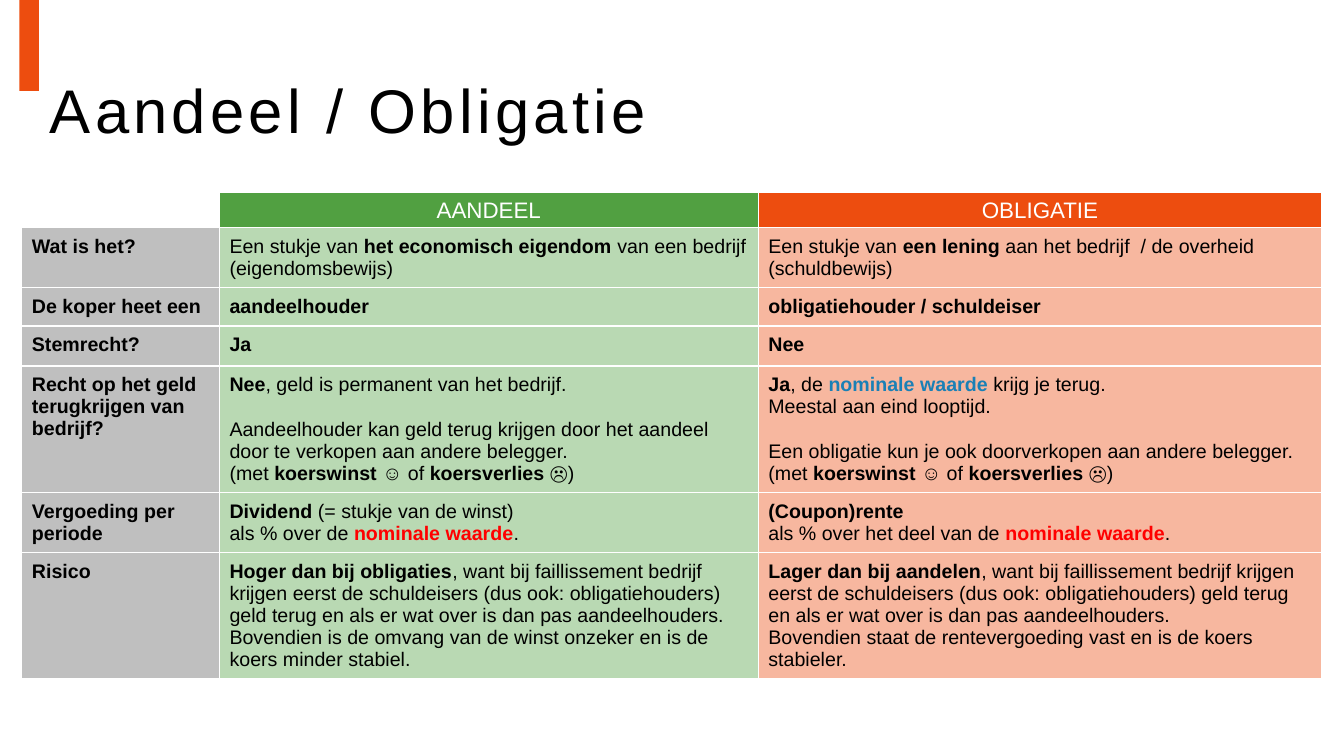
"""Build a slide that compares shares and bonds in a table."""
import dataclasses

import lxml.etree
import pptx
import pptx.dml.color
import pptx.enum.shapes
import pptx.enum.text
import pptx.oxml.ns
import pptx.util

Cm = pptx.util.Cm
Pt = pptx.util.Pt
qn = pptx.oxml.ns.qn


@dataclasses.dataclass(frozen=True)
class Theme:
    font: str = "Arial"
    black: str = "000000"
    white: str = "FFFFFF"
    gray: str = "BFBFBF"
    green: str = "51A041"
    orange: str = "ED4D0F"
    blue: str = "1A80B6"
    red: str = "FF0000"
    title_size: int = 44
    header_size: int = 16
    body_size: int = 14
    paragraph_gap: int = 16
    tint_percent: int = 40


THEME = Theme()
BOLD = {"bold": True}
BLUE = {"bold": True, "color": THEME.blue}
RED = {"bold": True, "color": THEME.red}

COLUMN_WIDTHS = [4.98, 13.58, 14.2]
ROW_HEIGHTS = [0.88, 1.51, 0.96, 1.01, 3.17, 1.51, 3.15]
HEADERS = [("AANDEEL", THEME.green), ("OBLIGATIE", THEME.orange)]
PROFIT_OR_LOSS = [("koerswinst ", BOLD), ("☺ of ", {}), ("koersverlies ", BOLD), ("☹)", {})]
BANKRUPTCY = (", want bij faillissement bedrijf krijgen eerst de schuldeisers "
              "(dus ook: obligatiehouders) geld terug en als er wat over is dan pas aandeelhouders.")
ROWS = [
    ("Wat is het?",
     [[("Een stukje van ", {}), ("het economisch eigendom ", BOLD),
       ("van een bedrijf (eigendomsbewijs)", {})]],
     [[("Een stukje van ", {}), ("een lening ", BOLD),
       ("aan het bedrijf  / de overheid\n(schuldbewijs)", {})]]),
    ("De koper heet een", [[("aandeelhouder", BOLD)]], [[("obligatiehouder / schuldeiser", BOLD)]]),
    ("Stemrecht?", [[("Ja", BOLD)]], [[("Nee", BOLD)]]),
    ("Recht op het geld terugkrijgen van bedrijf?",
     [[("Nee", BOLD), (", geld is permanent van het bedrijf.", {})],
      [("Aandeelhouder kan geld terug krijgen door het aandeel door te verkopen "
        "aan andere belegger.\n(met ", {}), *PROFIT_OR_LOSS]],
     [[("Ja", BOLD), (", de ", {}), ("nominale waarde ", BLUE),
       ("krijg je terug. \nMeestal aan eind looptijd.", {})],
      [("Een obligatie kun je ook doorverkopen aan andere belegger. (met ", {}), *PROFIT_OR_LOSS]]),
    ("Vergoeding per periode",
     [[("Dividend", BOLD), (" (= stukje van de winst)", {})],
      [("als % over de ", {}), ("nominale waarde", RED), (".", {})]],
     [[("(Coupon)rente \n", BOLD), ("als % over het deel van de ", {}),
       ("nominale waarde", RED), (".", {})]]),
    ("Risico",
     [[("Hoger dan bij obligaties", BOLD), (BANKRUPTCY, {})],
      [("Bovendien is de omvang van de winst onzeker en is de koers minder stabiel.", {})]],
     [[("Lager dan bij aandelen", BOLD),
       (BANKRUPTCY + "\nBovendien staat de rentevergoeding vast en is de koers stabieler.", {})]]),
]
SPACED_ROW = "Recht op het geld terugkrijgen van bedrijf?"


def rgb(color):
    return pptx.dml.color.RGBColor.from_string(color)


def add_text(paragraph, text, size=THEME.body_size, color=THEME.black, bold=False, spacing=0):
    for index, line in enumerate(text.split("\n")):
        if index:
            paragraph.add_line_break()
            line_break = paragraph._p.findall(qn("a:br"))[-1]
            lxml.etree.SubElement(line_break, qn("a:rPr"), sz=str(size * 100))
        if line:
            run = paragraph.add_run()
            run.text = line
            run.font.name = THEME.font
            run.font.size = Pt(size)
            run.font.bold = bold
            run.font.color.rgb = rgb(color)
            if spacing:
                run.font._element.set("spc", str(spacing * 100))


class SlideBuilder:
    def __init__(self, presentation, theme):
        self.theme = theme
        self.slide = presentation.slides.add_slide(presentation.slide_layouts[5])

    def add_bar(self, left, top, width, height):
        bar = self.slide.shapes.add_shape(
            pptx.enum.shapes.MSO_SHAPE.RECTANGLE, Cm(left), Cm(top), Cm(width), Cm(height))
        bar.shadow.inherit = False
        bar.fill.solid()
        bar.fill.fore_color.rgb = rgb(self.theme.orange)
        bar.line.fill.background()

    def add_title(self, text, left, top, width, height):
        title = self.slide.shapes.title
        title.left, title.top, title.width, title.height = map(Cm, (left, top, width, height))
        frame = title.text_frame
        frame.auto_size = pptx.enum.text.MSO_AUTO_SIZE.NONE
        frame.vertical_anchor = pptx.enum.text.MSO_ANCHOR.MIDDLE
        paragraph = frame.paragraphs[0]
        paragraph.alignment = pptx.enum.text.PP_ALIGN.LEFT
        paragraph.line_spacing = 0.9
        add_text(paragraph, text, size=self.theme.title_size, spacing=3)

    def add_borders(self, cell):
        properties = cell._tc.get_or_add_tcPr()
        for side in ("lnL", "lnR", "lnT", "lnB"):
            line = lxml.etree.SubElement(properties, qn(f"a:{side}"), w=str(Pt(1)))
            fill = lxml.etree.SubElement(line, qn("a:solidFill"))
            lxml.etree.SubElement(fill, qn("a:srgbClr"), val=self.theme.white)

    def fill_cell(self, cell, color, alpha=100):
        cell.fill.solid()
        cell.fill.fore_color.rgb = rgb(color)
        if alpha < 100:
            color_element = cell._tc.tcPr.find(f"{qn('a:solidFill')}/{qn('a:srgbClr')}")
            lxml.etree.SubElement(color_element, qn("a:alpha"), val=str(alpha * 1000))

    def write_cell(self, cell, paragraphs, gap=0):
        cell.margin_top = cell.margin_bottom = Cm(0.2)
        for index, runs in enumerate(paragraphs):
            paragraph = cell.text_frame.add_paragraph() if index else cell.text_frame.paragraphs[0]
            if index and gap:
                paragraph.space_before = Pt(gap)
            for text, style in runs:
                add_text(paragraph, text, **style)

    def add_comparison(self, left, top):
        table = self.slide.shapes.add_table(
            len(ROW_HEIGHTS), len(COLUMN_WIDTHS), Cm(left), Cm(top),
            Cm(sum(COLUMN_WIDTHS)), Cm(sum(ROW_HEIGHTS))).table
        table.first_row = table.horz_banding = False
        for column, width in zip(table.columns, COLUMN_WIDTHS):
            column.width = Cm(width)
        for row, height in zip(table.rows, ROW_HEIGHTS):
            row.height = Cm(height)
        for cell in table.iter_cells():
            self.add_borders(cell)

        corner = table.cell(0, 0)
        corner.fill.background()
        corner.margin_top = corner.margin_bottom = 0
        for column, (header, color) in enumerate(HEADERS, start=1):
            cell = table.cell(0, column)
            self.fill_cell(cell, color)
            paragraph = cell.text_frame.paragraphs[0]
            paragraph.alignment = pptx.enum.text.PP_ALIGN.CENTER
            add_text(paragraph, header, size=self.theme.header_size, color=self.theme.white)

        for row, (label, *answers) in enumerate(ROWS, start=1):
            label_cell = table.cell(row, 0)
            self.fill_cell(label_cell, self.theme.gray)
            self.write_cell(label_cell, [[(label, BOLD)]])
            gap = self.theme.paragraph_gap if label == SPACED_ROW else 0
            for column, (answer, (_, color)) in enumerate(zip(answers, HEADERS), start=1):
                cell = table.cell(row, column)
                self.fill_cell(cell, color, self.theme.tint_percent)
                self.write_cell(cell, answer, gap)


def main():
    presentation = pptx.Presentation()
    presentation.slide_width = Cm(33.87)
    presentation.slide_height = Cm(19.05)
    builder = SlideBuilder(presentation, THEME)
    builder.add_bar(0.49, 0, 0.49, 2.29)
    builder.add_title("Aandeel / Obligatie", 1, 1.02, 31.95, 3.68)
    builder.add_comparison(0.55, 4.86)
    presentation.save("out.pptx")


if __name__ == "__main__":
    main()
